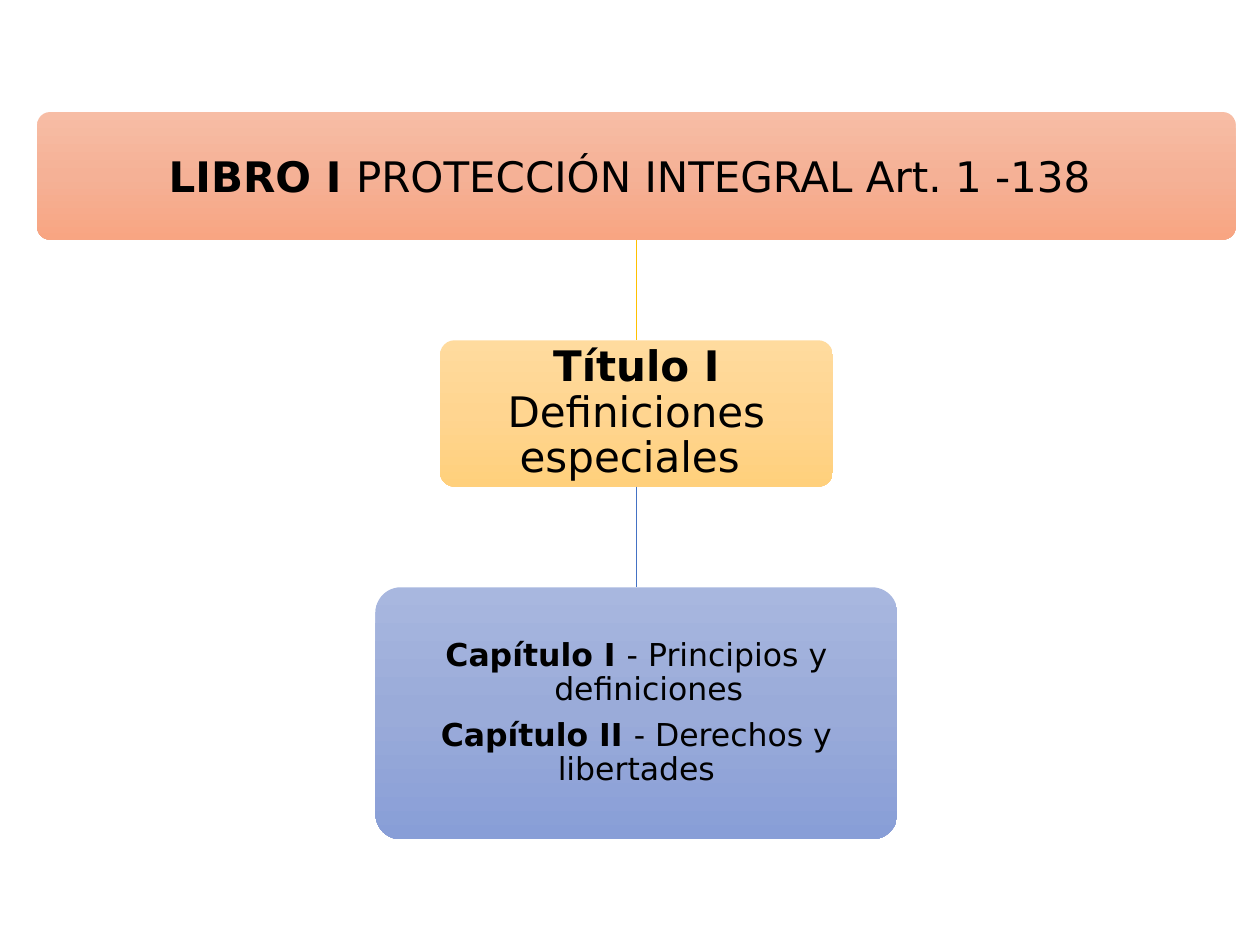
from copy import deepcopy
from dataclasses import dataclass

from lxml.etree import SubElement
from pptx import Presentation
from pptx.dml.color import RGBColor
from pptx.enum.shapes import MSO_CONNECTOR, MSO_SHAPE
from pptx.enum.text import MSO_ANCHOR, PP_ALIGN
from pptx.oxml.ns import qn
from pptx.util import Cm, Pt


@dataclass(frozen=True)
class Theme:
    font: str = "DejaVu Sans"
    text: str = "000000"
    heading_size: int = 24
    chapter_size: int = 18
    orange: tuple = ("F7BDA5", "F5B196", "F8A582")
    yellow: tuple = ("FFDB9E", "FFD590", "FFD07C")
    blue: tuple = ("A8B7DF", "9AABD9", "889ED7")
    yellow_line: str = "FFC000"
    blue_line: str = "4472C4"


THEME = Theme()

# Levels from top to bottom; each paragraph is a bold label and a plain text.
LEVELS = [
    dict(paragraphs=[("LIBRO I ", "PROTECCIÓN INTEGRAL Art. 1 -138 ")],
         width=24.16, height=2.57, inset=0.25, spacing=1.0, hanging=0,
         size=THEME.heading_size, colors=THEME.orange, line=None),
    dict(paragraphs=[("Título I ", "Definiciones especiales ")],
         width=7.92, height=2.95, inset=0.25, spacing=0.9, hanging=0,
         size=THEME.heading_size, colors=THEME.yellow, line=THEME.yellow_line),
    dict(paragraphs=[("Capítulo I ", "- Principios y definiciones"),
                     ("Capítulo II ", "- Derechos y libertades")],
         width=10.52, height=5.08, inset=0.18, spacing=0.9, hanging=0.5,
         size=THEME.chapter_size, colors=THEME.blue, line=THEME.blue_line),
]
CENTER, TOP, GAP = 12.83, 2.26, 2.03
SPACE_AFTER = 0.35  # share of the type size


def fill_gradient(shape, colors):
    """Fill from top to bottom with three evenly spaced colours."""
    fill = shape.fill
    fill.gradient()
    fill.gradient_angle = 270
    stop_list = shape.element.spPr.find(qn("a:gradFill")).find(qn("a:gsLst"))
    stop_list.insert(1, deepcopy(stop_list[0]))
    for stop, color, position in zip(fill.gradient_stops, colors, (0, 0.5, 1)):
        stop.color.rgb = RGBColor.from_string(color)
        stop.position = position


def write_text(box, level):
    frame = box.text_frame
    frame.word_wrap = True
    frame.vertical_anchor = MSO_ANCHOR.MIDDLE
    frame.margin_left = frame.margin_right = Cm(level["inset"])
    frame.margin_top = frame.margin_bottom = Cm(level["inset"])
    for index, (label, text) in enumerate(level["paragraphs"]):
        para = frame.add_paragraph() if index else frame.paragraphs[0]
        para.alignment = PP_ALIGN.CENTER
        para.line_spacing = level["spacing"]
        para.space_after = Pt(level["size"] * SPACE_AFTER)
        para.font.name = THEME.font
        para.font.size = Pt(level["size"])
        para.font.color.rgb = RGBColor.from_string(THEME.text)
        for content, bold in ((label, True), (text, False)):
            span = para.add_run()
            span.text = content
            span.font.bold = bold
    if level["hanging"]:
        properties = frame.paragraphs[0]._p.get_or_add_pPr()
        properties.set("marL", str(Cm(level["hanging"])))
        properties.set("indent", str(-Cm(level["hanging"])))


def add_box(page, level, top):
    box = page.shapes.add_shape(
        MSO_SHAPE.ROUNDED_RECTANGLE, Cm(CENTER - level["width"] / 2), Cm(top),
        Cm(level["width"]), Cm(level["height"]))
    box.adjustments[0] = 0.1
    box.shadow.inherit = False
    box.line.fill.background()
    fill_gradient(box, level["colors"])
    write_text(box, level)
    return box


def join(page, upper, lower, color):
    link = page.shapes.add_connector(MSO_CONNECTOR.STRAIGHT, 0, 0, 0, 0)
    link.begin_connect(upper, 2)
    link.end_connect(lower, 0)
    link.line.color.rgb = RGBColor.from_string(color)
    link.line.width = Pt(1)
    SubElement(link.element.spPr, qn("a:effectLst"))


def main():
    deck = Presentation()
    deck.slide_width, deck.slide_height = Cm(25.4), Cm(19.05)
    page = deck.slides.add_slide(deck.slide_layouts[6])
    top, upper = TOP, None
    for level in LEVELS:
        box = add_box(page, level, top)
        if upper is not None:
            join(page, upper, box, level["line"])
        top += level["height"] + GAP
        upper = box
    deck.save("out.pptx")


if __name__ == "__main__":
    main()
